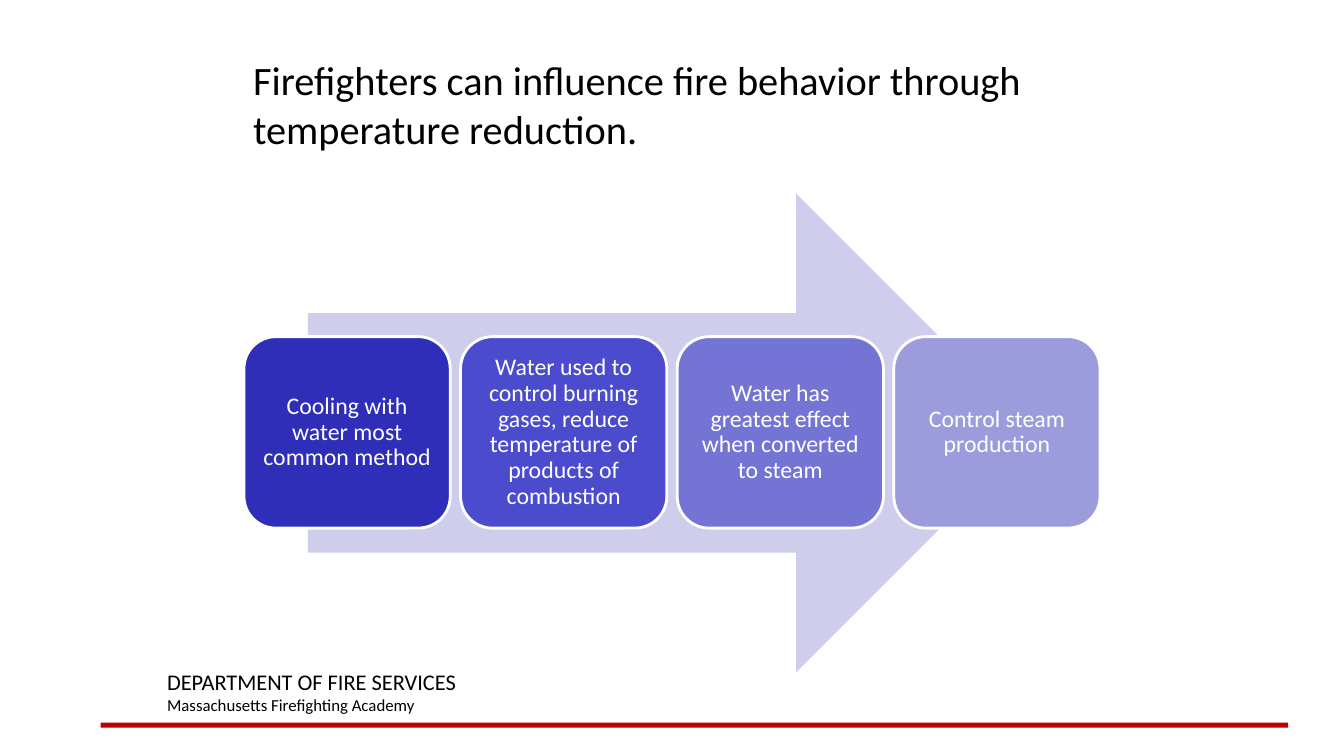
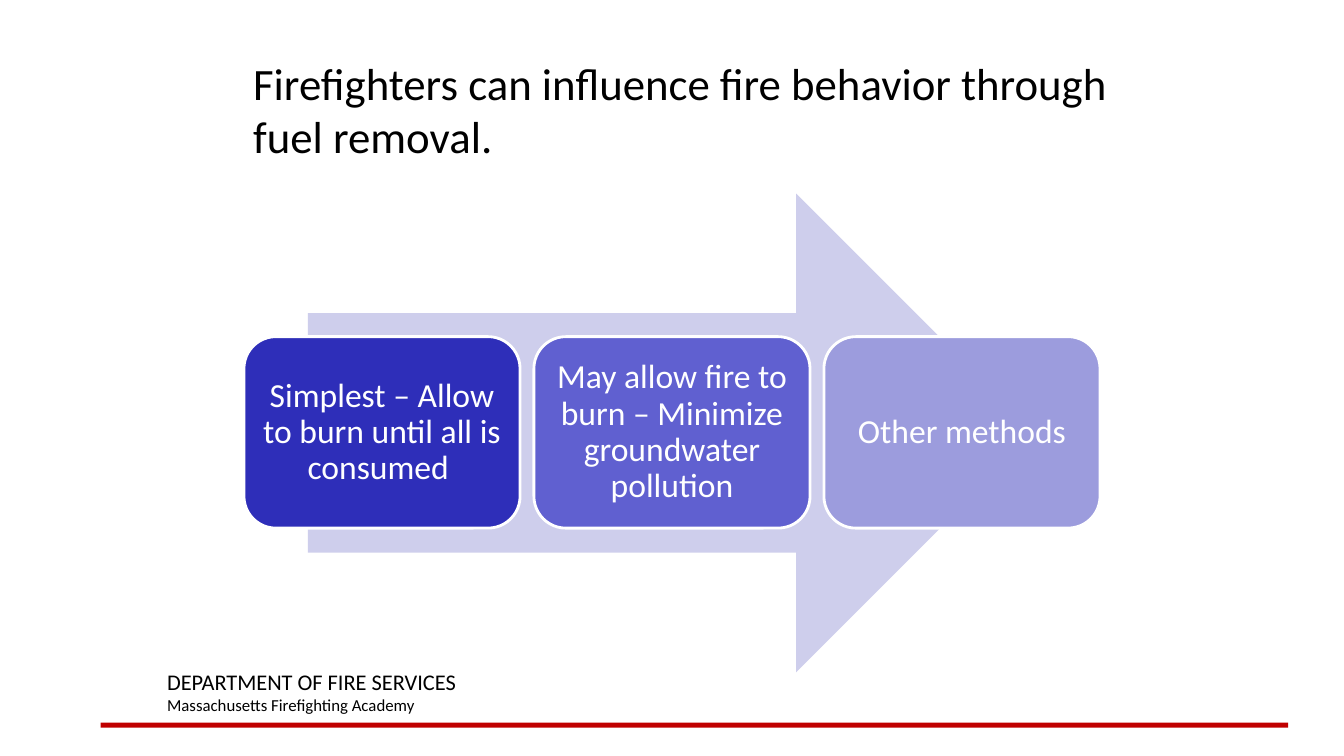
from pptx import Presentation
from pptx.dml.color import RGBColor
from pptx.enum.shapes import MSO_SHAPE as SHAPE
from pptx.enum.text import MSO_ANCHOR as ANCHOR, PP_ALIGN as ALIGN
from pptx.util import Inches, Pt

WIDTH, HEIGHT = Inches(13.33), Inches(7.5)
FONT = "Calibri"
BLACK = RGBColor(0x00, 0x00, 0x00)
WHITE = RGBColor(0xFF, 0xFF, 0xFF)
RED = RGBColor(0xC0, 0x00, 0x00)
ARROW = RGBColor(0xCE, 0xCE, 0xEC)
DARK = RGBColor(0x2E, 0x2E, 0xB9)
STRONG = RGBColor(0x4B, 0x4B, 0xCD)
MEDIUM = RGBColor(0x60, 0x60, 0xD0)
SOFT = RGBColor(0x74, 0x74, 0xD4)
PALE = RGBColor(0x9C, 0x9C, 0xDD)

# Left, top, width, height in percent of the slide
RULE_AREA = (7.5, 95.6, 88.35, 0.67)
FOOTER_AREA = (11.7, 87.73, 42.5, 7.6)
TITLE_AREA = (18.1, 6.67, 69.4, 13.33)
ARROW_AREA = (22.9, 25.6, 54.15, 63.33)
STEPS_AREA = (18.15, 44.53, 63.7, 25.33)
GAP_SHARE = 0.05  # gap between steps, as a share of a step's width


def area(left, top, width, height):
    """Turn percentages of the slide into lengths."""
    return (int(WIDTH * left / 100), int(HEIGHT * top / 100),
            int(WIDTH * width / 100), int(HEIGHT * height / 100))


def write(tf, lines, color=BLACK, align=ALIGN.LEFT, anchor=ANCHOR.TOP,
          spacing=1.0, inset=None):
    """Fill a text frame with (text, size) lines, one paragraph each."""
    tf.word_wrap = True
    tf.vertical_anchor = anchor
    if inset is not None:
        tf.margin_left = tf.margin_right = Inches(inset)
        tf.margin_top = tf.margin_bottom = Inches(inset)
    for i, (text, size) in enumerate(lines):
        p = tf.add_paragraph() if i else tf.paragraphs[0]
        p.alignment = align
        p.line_spacing = spacing
        r = p.add_run()
        r.text = text
        r.font.name = FONT
        r.font.size = Pt(size)
        r.font.color.rgb = color


def add_text(s, box, lines):
    write(s.shapes.add_textbox(*area(*box)).text_frame, lines)


def add_block(s, kind, box, fill, line=None):
    sp = s.shapes.add_shape(kind, *area(*box))
    sp.shadow.inherit = False
    sp.fill.solid()
    sp.fill.fore_color.rgb = fill
    if line is None:
        sp.line.fill.background()
    else:
        sp.line.color.rgb = line
        sp.line.width = Pt(2)
    return sp


def add_steps(s, steps, size, inset):
    """Spread equal rounded boxes over the arrow."""
    add_block(s, SHAPE.RIGHT_ARROW, ARROW_AREA, ARROW)
    left, top, total, height = STEPS_AREA
    width = total / (len(steps) + GAP_SHARE * (len(steps) - 1))
    for i, (text, fill) in enumerate(steps):
        box = (left + i * width * (1 + GAP_SHARE), top, width, height)
        sp = add_block(s, SHAPE.ROUNDED_RECTANGLE, box, fill, WHITE)
        write(sp.text_frame, [(text, size)], color=WHITE, align=ALIGN.CENTER,
              anchor=ANCHOR.MIDDLE, spacing=0.9, inset=inset)


def add_slide(prs, title, title_size, steps, step_size, inset):
    s = prs.slides.add_slide(prs.slide_layouts[6])
    add_block(s, SHAPE.RECTANGLE, RULE_AREA, RED)
    add_text(s, FOOTER_AREA, [("DEPARTMENT OF FIRE SERVICES", 16),
                              ("Massachusetts Firefighting Academy", 12)])
    add_steps(s, steps, step_size, inset)
    add_text(s, TITLE_AREA, [(title, title_size)])


def main():
    prs = Presentation()
    prs.slide_width, prs.slide_height = WIDTH, HEIGHT
    add_slide(
        prs,
        "Firefighters can influence fire behavior through temperature reduction.",
        28.8,
        [("Cooling with water most common method", DARK),
         ("Water used to control burning gases, reduce temperature of "
          "products of combustion", STRONG),
         ("Water has greatest effect when converted to steam", SOFT),
         ("Control steam production", PALE)],
        step_size=17, inset=0.07)
    add_slide(
        prs,
        "Firefighters can influence fire behavior through fuel removal.",
        32,
        [("Simplest – Allow to burn until all is consumed ", DARK),
         ("May allow fire to burn – Minimize groundwater pollution", MEDIUM),
         ("Other methods", PALE)],
        step_size=24, inset=0.1)
    prs.save("out.pptx")


if __name__ == "__main__":
    main()
